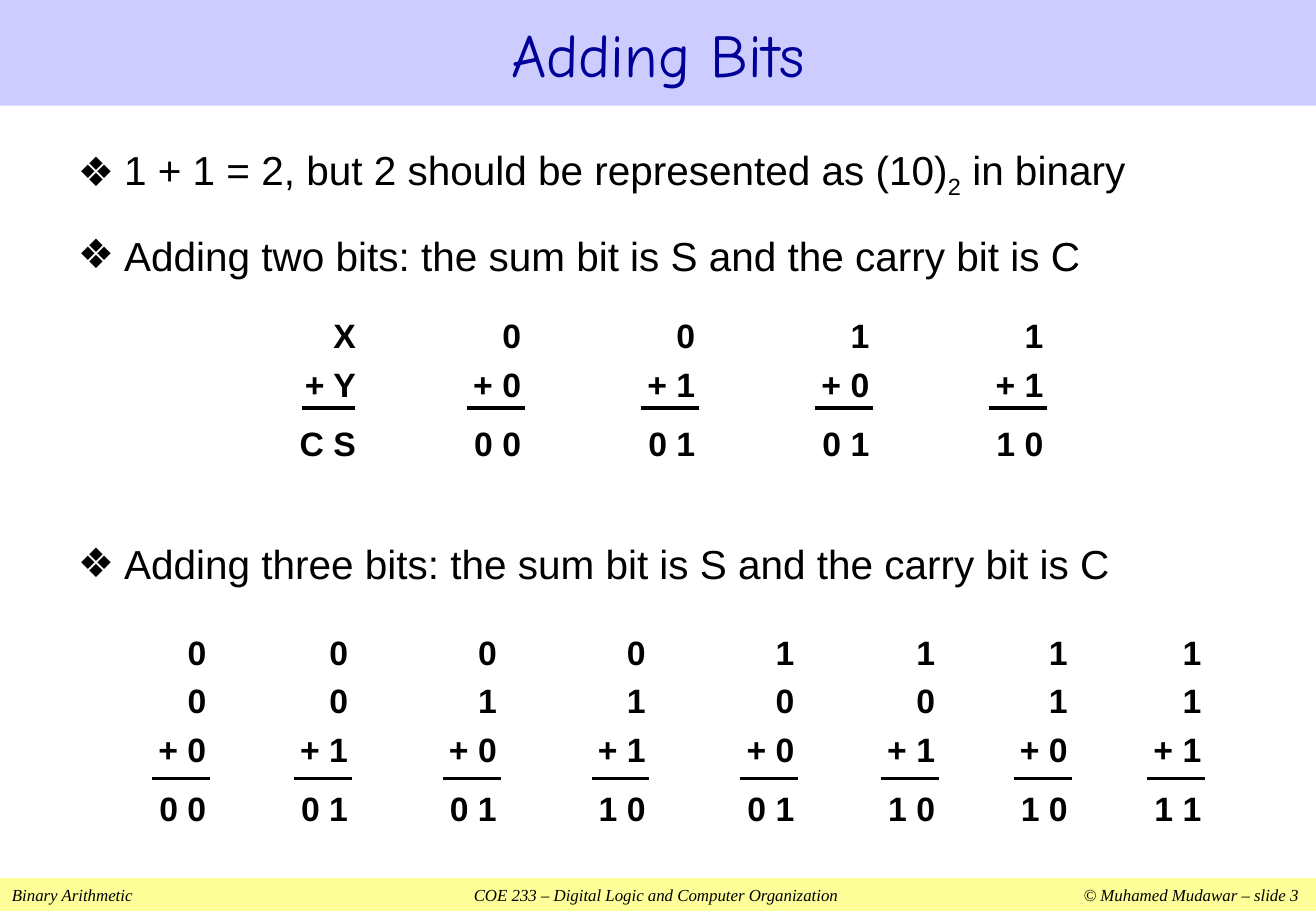
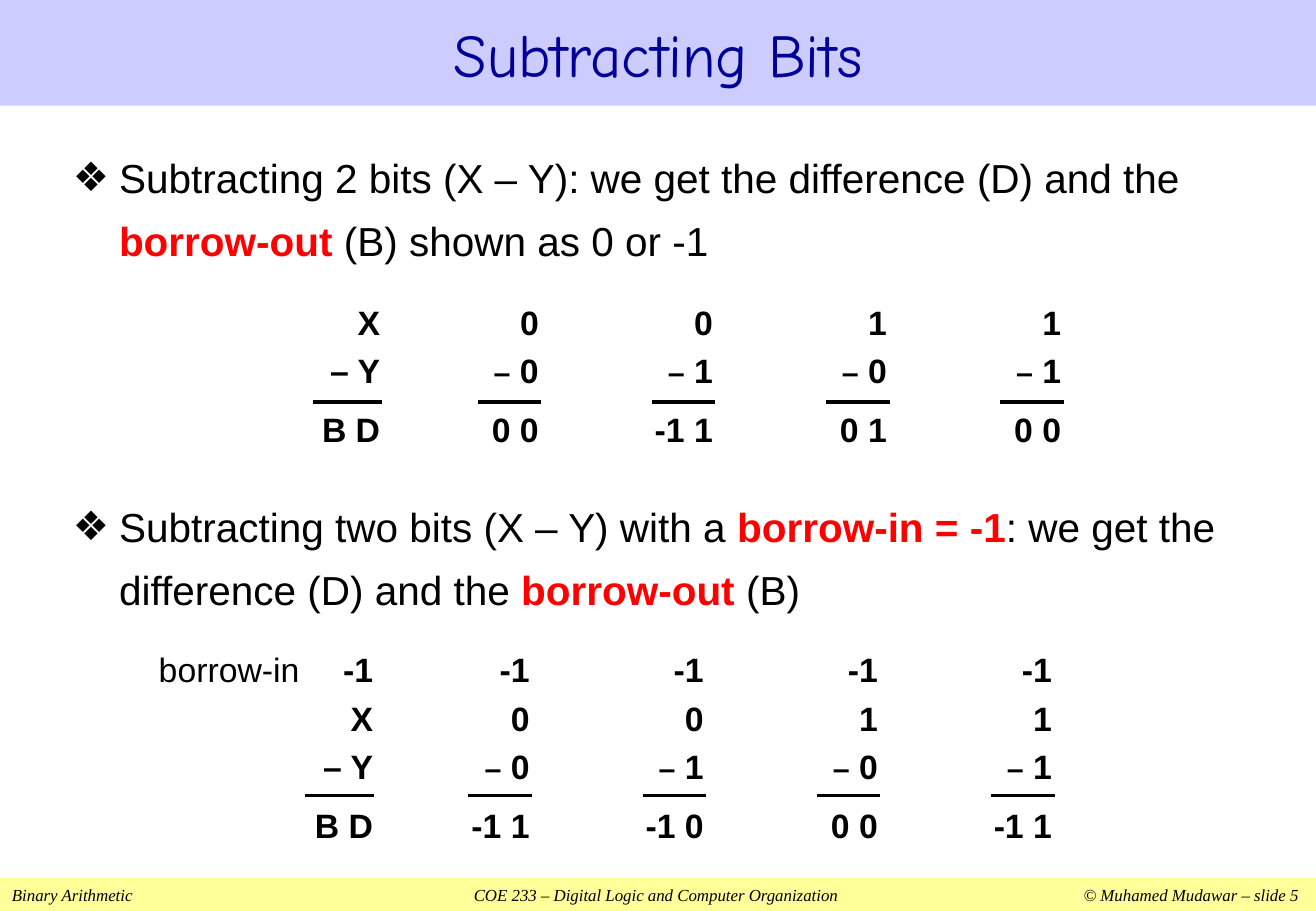
from dataclasses import dataclass, field
from itertools import product

from lxml.etree import SubElement as Sub
from pptx import Presentation
from pptx.dml.color import RGBColor as Rgb
from pptx.enum.shapes import MSO_CONNECTOR as Link, MSO_SHAPE as Kind
from pptx.enum.text import MSO_ANCHOR as Anchor, MSO_AUTO_SIZE as Fit, PP_ALIGN as Align
from pptx.oxml.ns import qn
from pptx.util import Inches, Pt


# Theme: colours, fonts and type sizes
@dataclass(frozen=True)
class Theme:
    ink: Rgb = Rgb(0, 0, 0)
    navy: Rgb = Rgb(0, 0, 0x99)
    red: Rgb = Rgb(0xFF, 0, 0)
    band: Rgb = Rgb(0xCC, 0xCC, 0xFF)
    foot: Rgb = Rgb(0xFF, 0xFF, 0x99)
    sans: str = "Arial"
    head: str = "Comic Neue"
    serif: str = "Times New Roman"
    rule: float = 2.25

    def title(self) -> dict:
        return dict(name=self.head, size=Pt(36), bold=False, rgb=self.navy)

    def list(self) -> dict:
        return dict(name=self.sans, size=Pt(24), bold=False, rgb=self.ink)

    def bits(self) -> dict:
        return dict(name=self.sans, size=Pt(20), bold=True, rgb=self.ink)

    def note(self) -> dict:
        return dict(name=self.serif, size=Pt(10), italic=True, rgb=self.ink)


T = Theme()
COLS, ROWS = 130, 90  # grid of square cells, 6 pt each
CELL = Pt(6)
STEP = 17.2  # columns between two-bit sums
RED = dict(bold=True, rgb=T.red)


@dataclass(frozen=True)
class Span:
    text: str
    look: dict = field(default_factory=dict)
    sub: bool = False


@dataclass(frozen=True)
class Item:
    spans: tuple
    gap: float = 0  # points before


@dataclass(frozen=True)
class Sum:
    left: float
    width: float
    lines: tuple
    inset: float  # rule start, from the left of the box
    rule: float  # rule length
    sign: int = 20  # size of the operator


@dataclass(frozen=True)
class Row:
    top: float
    drop: float  # rule below the top
    sums: list


@dataclass(frozen=True)
class Page:
    title: str
    num: int
    body: tuple
    lead: float  # line spacing
    items: list
    rows: list


def at(*cells: float) -> list:
    return [round(c * CELL) for c in cells]


def style(font, look: dict) -> None:
    for key, val in look.items():
        if key == "rgb":
            font.color.rgb = val
        else:
            setattr(font, key, val)


def put(par, text: str, look: dict):
    run = par.add_run()
    run.text = text
    style(run.font, look)
    return run


def fill(shape, rgb: Rgb) -> None:
    shape.fill.solid()
    shape.fill.fore_color.rgb = rgb


def place(shape, box: tuple) -> None:
    for key, val in zip(("left", "top", "width", "height"), at(*box)):
        setattr(shape, key, val)


# Shared bands
def add_title(slide, text: str) -> None:
    shape = slide.shapes.title
    place(shape, (0, 0, COLS, 10.45))
    fill(shape, T.band)
    frame = shape.text_frame
    frame.auto_size = Fit.NONE
    frame.vertical_anchor = Anchor.MIDDLE
    par = frame.paragraphs[0]
    par.alignment = Align.CENTER
    put(par, text, T.title())


def add_foot(slide, num: int) -> None:
    shape = slide.shapes.add_shape(Kind.RECTANGLE, *at(0, 86.76, COLS, ROWS - 86.76))
    shape.shadow.inherit = False
    fill(shape, T.foot)
    shape.line.fill.background()
    frame = shape.text_frame
    frame.margin_top = frame.margin_bottom = 0
    frame.vertical_anchor = Anchor.MIDDLE
    par = frame.paragraphs[0]
    par.alignment = Align.LEFT
    put(par, "Binary Arithmetic\tCOE 233 – Digital Logic and Computer Organization"
             f"\t© Muhamed Mudawar – slide {num}", T.note())
    tabs = Sub(par._p.get_or_add_pPr(), qn("a:tabLst"))
    for pos, algn in ((5.3, "ctr"), (10.59, "r")):
        Sub(tabs, qn("a:tab"), pos=str(Inches(pos)), algn=algn)


# Bulleted list
def add_list(slide, page: Page) -> None:
    shape = slide.placeholders[1]
    place(shape, page.body)
    frame = shape.text_frame
    frame.auto_size = Fit.NONE
    frame.vertical_anchor = Anchor.TOP
    for i, item in enumerate(page.items):
        par = frame.add_paragraph() if i else frame.paragraphs[0]
        par.line_spacing = page.lead
        par.space_before = Pt(item.gap)
        for span in item.spans:
            run = put(par, span.text, T.list() | span.look)
            if span.sub:
                run._r.get_or_add_rPr().set("baseline", "-25000")
        props = par._p.get_or_add_pPr()
        props.set("marL", str(Inches(0.38)))
        props.set("indent", str(Inches(-0.38)))
        Sub(props, qn("a:buChar"), char="❖")


# Column sums: right-aligned digits over a rule
def add_sum(slide, row: Row, col: Sum) -> None:
    group = slide.shapes.add_group_shape().shapes
    high = 16 if len(col.lines) == 3 else 21
    frame = group.add_textbox(*at(col.left, row.top, col.width, high)).text_frame
    frame.word_wrap = True
    last = len(col.lines) - 1
    for i, line in enumerate(col.lines):
        par = frame.add_paragraph() if i else frame.paragraphs[0]
        par.alignment = Align.RIGHT
        par.space_before = Pt(0 if i == 0 else 11 if i == last else 4.8)
        if i == last - 1:
            put(par, line[0], T.bits() | dict(size=Pt(col.sign)))
            line = line[1:]
        put(par, line, T.bits())
    x, y = col.left + col.inset, row.top + row.drop
    rule = group.add_connector(Link.STRAIGHT, *at(x, y, x + col.rule, y))
    rule.line.color.rgb = T.ink
    rule.line.width = Pt(T.rule)
    Sub(rule._element.spPr, qn("a:effectLst"))


def work(bits: tuple, sign: str, start: tuple = ()) -> tuple:
    """Lines of one sum: the digits, the signed last digit and the result."""
    *tops, end = start + bits
    total = sum(tops) + (end if sign == "+" else -end)
    high, low = divmod(total, 2)
    return (*map(str, tops), f"{sign} {end}", f"{high} {low}")


def adds(lefts: list, count: int) -> list:
    return [Sum(x, 8.16, work(bits, "+"), 1.64, 5.72)
            for x, bits in zip(lefts, product((0, 1), repeat=count))]


def takes(lefts: list, start: tuple = ()) -> list:
    return [Sum(x, 9, work(bits, "–", start), 1.78, 6.3, 18)
            for x, bits in zip(lefts, product((0, 1), repeat=2))]


def steps(left: float) -> list:
    return [left + STEP * i for i in range(4)]


PAGES = [
    Page("Adding Bits", 3, (6.5, 13.2, 117, 46.1), 1.1, [
        Item((Span("1 + 1 = 2, but 2 should be represented as (10)"),
              Span("2", sub=True), Span(" in binary"))),
        Item((Span("Adding two bits: the sum bit is S and the carry bit is C"),), 15),
        Item((Span("Adding three bits: the sum bit is S and the carry bit is C"),), 151),
    ], [
        Row(30.5, 9.8, [Sum(26.5, 9.84, ("X", "+ Y", "C S"), 3.3, 5.25)]
            + adds(steps(44.5), 2)),
        Row(61.8, 15.1, adds([13.4, 27.4, 42.1, 56.8, 71.5, 85.4, 98.5, 111.7], 3)),
    ]),
    Page("Subtracting Bits", 5, (6, 13.1, 117, 49.7), 1.3, [
        Item((Span("Subtracting 2 bits (X – Y): we get the difference (D) and the "),
              Span("borrow-out", RED), Span(" (B) shown as 0 or -1"))),
        Item((Span("Subtracting two bits (X – Y) with a "), Span("borrow-in = -1", RED),
              Span(": we get the difference (D) and the "),
              Span("borrow-out", RED), Span(" (B)")), 132),
    ], [
        Row(29.2, 10.5, [Sum(28.9, 9.84, ("X", "– Y", "B D"), 2, 6.85)]
            + takes(steps(45.4))),
        Row(63.5, 15.1, [Sum(28.2, 9.84, ("-1", "X", "– Y", "B D"), 1.9, 6.85)]
            + takes(steps(44.5), (-1,))),
    ]),
]


def main() -> None:
    deck = Presentation()
    deck.slide_width, deck.slide_height = at(COLS, ROWS)
    for page in PAGES:
        slide = deck.slides.add_slide(deck.slide_layouts[1])
        add_foot(slide, page.num)
        add_title(slide, page.title)
        add_list(slide, page)
        for row in page.rows:
            for col in row.sums:
                add_sum(slide, row, col)

    # Label beside the last row of the second slide
    frame = slide.shapes.add_textbox(*at(14.5, 63.5, 16.4, 5.3)).text_frame
    frame.word_wrap = False
    put(frame.paragraphs[0], "borrow-in", T.bits() | dict(bold=False))
    deck.save("out.pptx")


if __name__ == "__main__":
    main()
